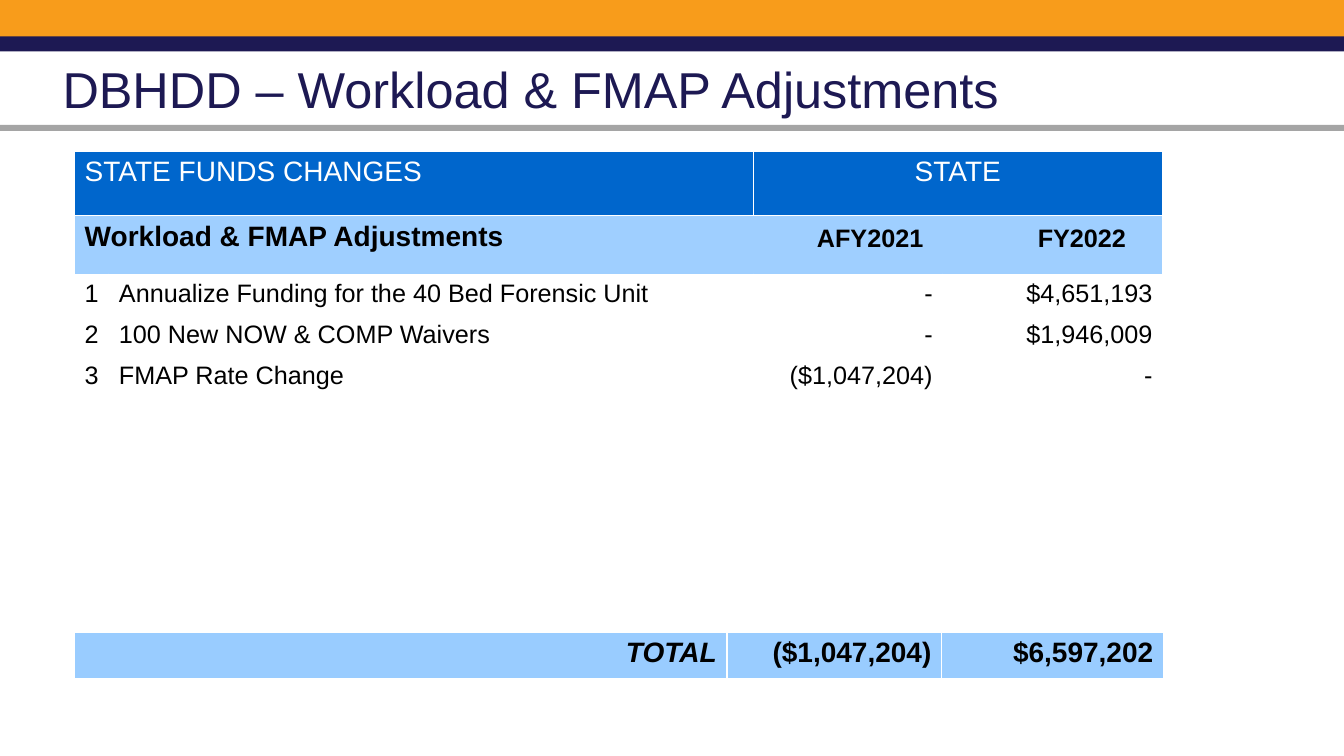
from lxml.etree import SubElement
from pptx import Presentation
from pptx.dml.color import RGBColor
from pptx.enum.shapes import MSO_SHAPE
from pptx.enum.text import MSO_ANCHOR, PP_ALIGN
from pptx.oxml.ns import qn
from pptx.util import Inches, Pt

COLORS = {"orange": "F89C1B", "navy": "1D1953", "gray": "A5A5A5",
          "header": "0066CC", "section": "9FCFFF", "total": "99CCFF",
          "white": "FFFFFF", "black": "000000"}
LEFT, CENTER, RIGHT = PP_ALIGN.LEFT, PP_ALIGN.CENTER, PP_ALIGN.RIGHT
TABLE_LEFT, TABLE_WIDTH = 0.74, 10.8


def write(frame, text, size, color="black", align=LEFT, bold=False, italic=False):
    paragraph = frame.paragraphs[0]
    paragraph.alignment = align
    run = paragraph.add_run()
    run.text = text
    run.font.name, run.font.size = "Arial", Pt(size)
    run.font.bold, run.font.italic = bold, italic
    run.font.color.rgb = RGBColor.from_string(COLORS[color])
    return paragraph


def add_grid(top, columns, rows, fills):
    """Add a table with white rules; fills holds one colour name or None per row."""
    grid = slide.shapes.add_table(
        len(rows), len(columns), Inches(TABLE_LEFT), Inches(top),
        Inches(TABLE_WIDTH), Inches(sum(rows))).table
    grid.first_row = grid.horz_banding = False
    for column, width in zip(grid.columns, columns):
        column.width = Inches(width)
    for row, height, fill in zip(grid.rows, rows, fills):
        row.height = Inches(height)
        for cell in row.cells:
            properties = cell._tc.get_or_add_tcPr()
            for side in ("lnL", "lnR", "lnT", "lnB"):
                line = SubElement(properties, qn(f"a:{side}"), w=str(Pt(1)))
                SubElement(SubElement(line, qn("a:solidFill")),
                           qn("a:srgbClr"), val=COLORS["white"])
            if fill:
                cell.fill.solid()
                cell.fill.fore_color.rgb = RGBColor.from_string(COLORS[fill])
            else:
                cell.fill.background()
    return grid


deck = Presentation()
deck.slide_width, deck.slide_height = Inches(13.33), Inches(7.5)
slide = deck.slides.add_slide(deck.slide_layouts[5])

# Bands across the top
for top, height, color in ((0, 0.4, "orange"), (0.36, 0.15, "navy"), (1.24, 0.06, "gray")):
    band = slide.shapes.add_shape(MSO_SHAPE.RECTANGLE, 0, Inches(top),
                                  deck.slide_width, Inches(height))
    band.shadow.inherit = False
    band.fill.solid()
    band.fill.fore_color.rgb = RGBColor.from_string(COLORS[color])
    band.line.fill.background()

# Title
title = slide.shapes.title
title.left, title.top = Inches(0.52), Inches(0.19)
title.width, title.height = Inches(11.77), Inches(1.45)
title.text_frame.vertical_anchor = MSO_ANCHOR.MIDDLE
heading = write(title.text_frame, "DBHDD – Workload & FMAP Adjustments", 36, "navy")
heading.line_spacing = 0.9

# State funds changes
adjustments = (
    ("1", "Annualize Funding for the 40 Bed Forensic Unit", "-", "$4,651,193"),
    ("2", "100 New NOW & COMP Waivers", "-", "$1,946,009"),
    ("3", "FMAP Rate Change", "($1,047,204)", "-"),
)
body_rows = 8
changes = add_grid(1.5, (0.34, 6.39, 1.88, 2.18), [0.64, 0.58] + [0.41] * body_rows,
                   ["header", "section"] + [None] * body_rows)
for row, first, last in ((0, 0, 1), (0, 2, 3), (1, 0, 3)):
    changes.cell(row, first).merge(changes.cell(row, last))
write(changes.cell(0, 0).text_frame, "STATE FUNDS CHANGES", 20, "white")
write(changes.cell(0, 2).text_frame, "STATE", 20, "white", CENTER)
write(changes.cell(1, 0).text_frame, "Workload & FMAP Adjustments", 20, bold=True)
for row, adjustment in enumerate(adjustments, start=2):
    for column, text in enumerate(adjustment):
        write(changes.cell(row, column).text_frame, text, 18,
              align=RIGHT if column > 1 else LEFT)

# Totals
totals = add_grid(6.27, (6.47, 2.13, 2.2), [0.46], ["total"])
for column, text in enumerate(("TOTAL", "($1,047,204)", "$6,597,202")):
    write(totals.cell(0, column).text_frame, text, 20, align=RIGHT,
          bold=True, italic=column == 0)

# Fiscal year labels
for left, year in ((7.92, "AFY2021"), (10.02, "FY2022")):
    label = slide.shapes.add_textbox(Inches(left), Inches(2.16), Inches(1.42), Inches(0.4))
    label.text_frame.word_wrap = True
    write(label.text_frame, year, 18, align=CENTER, bold=True)

deck.save("out.pptx")
